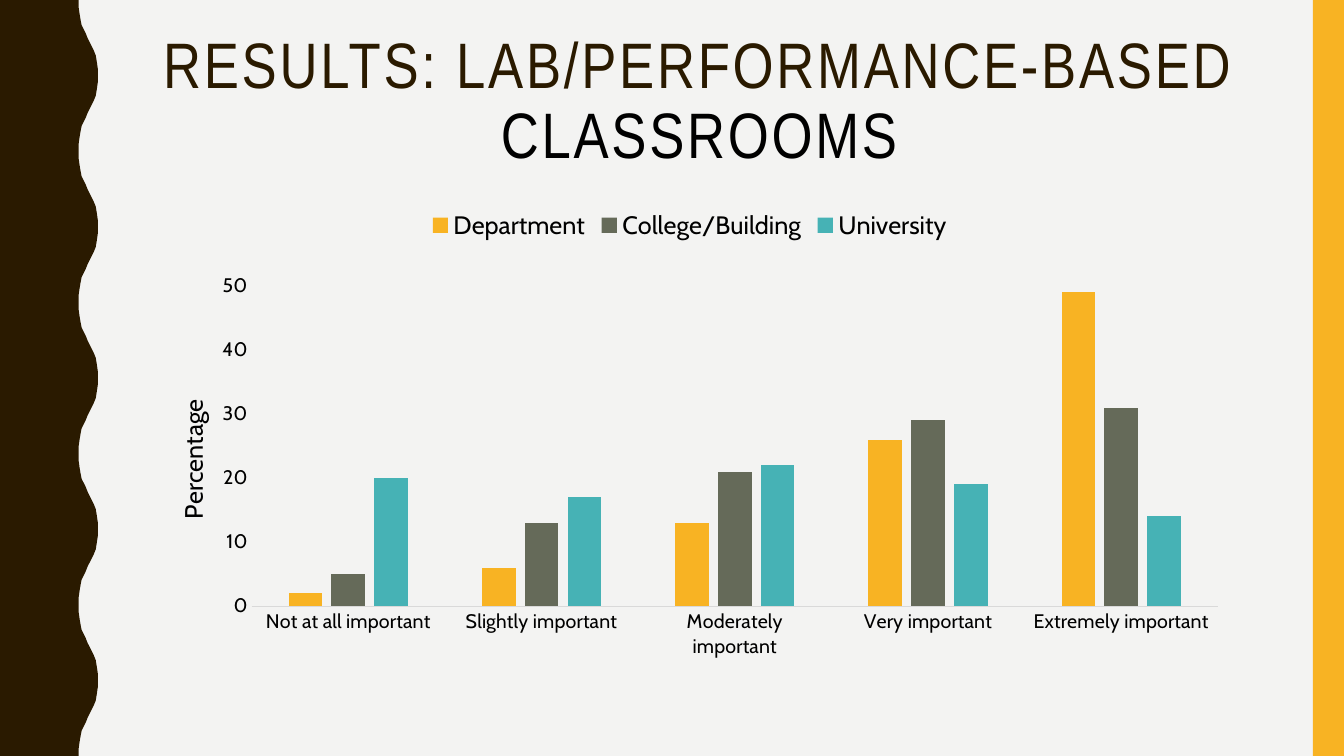
from lxml import etree
from pptx import Presentation
from pptx.chart.data import CategoryChartData
from pptx.dml.color import RGBColor
from pptx.enum.chart import XL_CHART_TYPE, XL_LEGEND_POSITION, XL_TICK_MARK
from pptx.enum.shapes import MSO_SHAPE
from pptx.enum.text import MSO_ANCHOR, PP_ALIGN
from pptx.oxml.ns import qn
from pptx.util import Inches, Pt

COLUMNS = XL_CHART_TYPE.COLUMN_CLUSTERED
LEGEND_TOP = XL_LEGEND_POSITION.TOP
NO_TICK = XL_TICK_MARK.NONE
RECTANGLE = MSO_SHAPE.RECTANGLE
TOP = MSO_ANCHOR.TOP
CENTER = PP_ALIGN.CENTER

COLORS = {
    "background": "F3F3F2",
    "brown": "2A1A00",
    "gold": "F8B323",
    "olive": "656A59",
    "teal": "46B2B5",
    "axis": "D9D9D9",
    "black": "000000",
}
HEADING_FONT = "Arial Narrow"
BODY_FONT = "Cabin"

SLIDE_WIDTH, SLIDE_HEIGHT = 13.33, 7.5
WAVE_PERIOD = 1.5
HALF_WAVE = [
    (0.78, 0), (0.78, 0.07), (0.79, 0.14), (0.8, 0.2), (0.81, 0.25),
    (0.83, 0.29), (0.85, 0.33), (0.87, 0.38), (0.89, 0.42), (0.91, 0.46),
    (0.93, 0.5), (0.95, 0.55), (0.96, 0.61), (0.97, 0.68), (0.97, 0.75),
]

CATEGORIES = [
    "Not at all important", "Slightly important", "Moderately important",
    "Very important", "Extremely important",
]
SERIES = [
    ("Department", [2, 6, 13, 26, 49], "gold"),
    ("College/Building", [5, 13, 21, 29, 31], "olive"),
    ("University", [20, 17, 22, 19, 14], "teal"),
]


def color(name):
    return RGBColor.from_string(COLORS[name])


def paint(shape, name):
    shape.shadow.inherit = False
    shape.fill.solid()
    shape.fill.fore_color.rgb = color(name)
    shape.line.fill.background()


def style_font(font, face, size, name):
    font.name = face
    font.size = Pt(size)
    font.bold = False
    font.color.rgb = color(name)


def add_wave(page):
    mirrored = [(x, WAVE_PERIOD - y) for x, y in reversed(HALF_WAVE[:-1])]
    period = HALF_WAVE + mirrored
    edge = [
        (x, y + index * WAVE_PERIOD)
        for index in range(int(SLIDE_HEIGHT / WAVE_PERIOD))
        for x, y in period
    ]
    points = edge + [(0, SLIDE_HEIGHT)]
    builder = page.shapes.build_freeform(0, 0)
    builder.add_line_segments([(Inches(x), Inches(y)) for x, y in points], close=True)
    paint(builder.convert_to_shape(), "brown")


def add_side_bar(page):
    bar = page.shapes.add_shape(
        RECTANGLE, Inches(13.02), 0, Inches(0.31), Inches(SLIDE_HEIGHT)
    )
    paint(bar, "gold")


def add_title(page):
    box = page.shapes.add_textbox(Inches(1.37), Inches(0.28), Inches(11.13), Inches(0.87))
    frame = box.text_frame
    frame.word_wrap = True
    frame.vertical_anchor = TOP
    para = frame.paragraphs[0]
    para.alignment = CENTER
    para.line_spacing = 0.9
    for text, name in (
        ("RESULTS: LAB/PERFORMANCE-BASED ", "brown"),
        ("CLASSROOMS", "black"),
    ):
        span = para.add_run()
        span.text = text
        style_font(span.font, HEADING_FONT, 45.9, name)
        span.font._element.set("spc", "200")


def place(element, **settings):
    layout = element.find(qn("c:layout"))
    if layout is None:
        layout = etree.Element(qn("c:layout"))
        element.insert(0, layout)
    manual = etree.SubElement(layout, qn("c:manualLayout"))
    for tag, value in settings.items():
        etree.SubElement(manual, qn(f"c:{tag}")).set("val", str(value))


def style_axis(axis):
    axis.major_tick_mark = NO_TICK
    axis.minor_tick_mark = NO_TICK
    axis.has_major_gridlines = False
    style_font(axis.tick_labels.font, BODY_FONT, 14, "black")


def style_axes(chart):
    category_axis, value_axis = chart.category_axis, chart.value_axis
    style_axis(category_axis)
    category_axis.format.line.color.rgb = color("axis")
    category_axis.format.line.width = Pt(0.75)

    style_axis(value_axis)
    value_axis.format.line.fill.background()
    value_axis.minimum_scale = 0
    value_axis.maximum_scale = 55
    value_axis.major_unit = 10
    value_axis.tick_labels.number_format = "0"
    value_axis.tick_labels.number_format_is_linked = False
    title = value_axis.axis_title
    para = title.text_frame.paragraphs[0]
    para.text = "Percentage"
    style_font(para.runs[0].font, BODY_FONT, 18, "black")
    title.text_frame._txBody.bodyPr.set("rot", "-5400000")
    title.text_frame._txBody.bodyPr.set("vert", "horz")
    place(title._element, xMode="edge", yMode="edge", x=0.03, y=0.42)


def add_results_chart(page):
    data = CategoryChartData(number_format="0")
    data.categories = CATEGORIES
    for name, values, _ in SERIES:
        data.add_series(name, values)
    chart = page.shapes.add_chart(
        COLUMNS, Inches(1.37), Inches(1.96), Inches(10.94), Inches(4.66), data
    ).chart
    style_font(chart.font, BODY_FONT, 10, "black")
    chart.has_title = False
    chart.has_legend = True
    chart.legend.position = LEGEND_TOP
    chart.legend.include_in_layout = False
    style_font(chart.legend.font, BODY_FONT, 18, "black")

    plot = chart.plots[0]
    plot.gap_width = 219
    plot.overlap = -27
    plot.vary_by_categories = False
    for series, (_, _, name) in zip(plot.series, SERIES):
        series.format.fill.solid()
        series.format.fill.fore_color.rgb = color(name)
    style_axes(chart)
    place(
        chart._chartSpace.chart.plotArea,
        layoutTarget="inner", xMode="edge", yMode="edge",
        x=0.103, y=0.12, w=0.876, h=0.75,
    )


def main():
    deck = Presentation()
    deck.slide_width = Inches(SLIDE_WIDTH)
    deck.slide_height = Inches(SLIDE_HEIGHT)
    page = deck.slides.add_slide(deck.slide_layouts[6])
    page.background.fill.solid()
    page.background.fill.fore_color.rgb = color("background")
    add_wave(page)
    add_side_bar(page)
    add_title(page)
    add_results_chart(page)
    deck.save("out.pptx")


if __name__ == "__main__":
    main()
